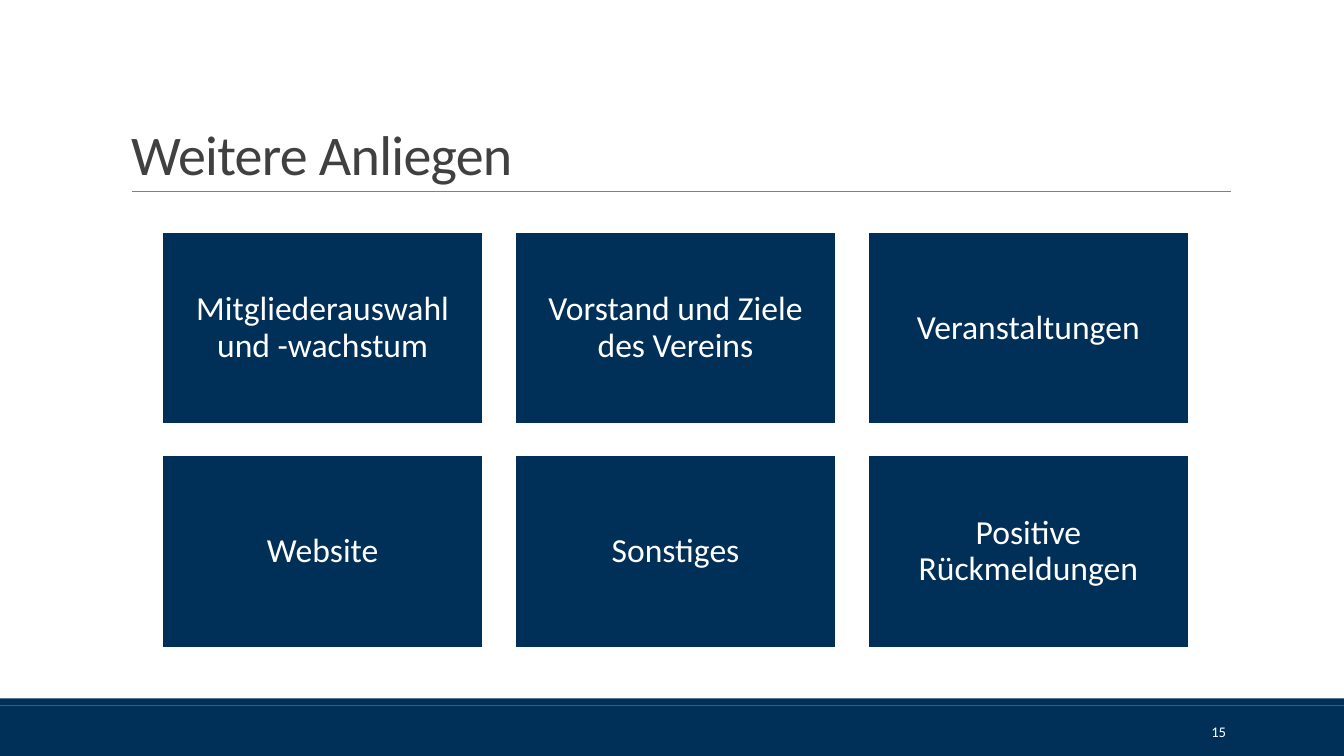
import dataclasses

import pptx
import pptx.dml.color
import pptx.enum.shapes
import pptx.enum.text
import pptx.oxml.ns
import pptx.util
import lxml.etree

Inches = pptx.util.Inches
Pt = pptx.util.Pt
Align = pptx.enum.text.PP_ALIGN
Anchor = pptx.enum.text.MSO_ANCHOR


@dataclasses.dataclass(frozen=True)
class Theme:
    font: str = "Calibri"
    navy: str = "003058"
    white: str = "FFFFFF"
    dark: str = "404040"
    gray: str = "808080"
    title: float = 40
    tile: float = 24
    page: float = 10.5


@dataclasses.dataclass(frozen=True)
class Grid:
    left: float = 1.61
    top: float = 2.3
    wide: float = 3.18
    high: float = 1.91
    step: float = 3.5
    drop: float = 2.22
    cols: int = 3

    def cell(self, index):
        row, col = divmod(index, self.cols)
        return (self.left + col * self.step, self.top + row * self.drop,
                self.wide, self.high)


THEME = Theme()
GRID = Grid()
WIDE, HIGH = 13.33, 7.5
TOPICS = (
    "Mitgliederauswahl und -wachstum",
    "Vorstand und Ziele des Vereins",
    "Veranstaltungen",
    "Website",
    "Sonstiges",
    "Positive Rückmeldungen",
)


def color(code):
    return pptx.dml.color.RGBColor.from_string(code)


def apply(target, values):
    for name, value in values.items():
        setattr(target, name, value)


def write(shape, text, size, ink, align, anchor, lead=1.0):
    frame = shape.text_frame
    frame.text = text
    apply(frame, {"word_wrap": True, "vertical_anchor": anchor,
                  "auto_size": pptx.enum.text.MSO_AUTO_SIZE.NONE})
    line = frame.paragraphs[0]
    apply(line, {"alignment": align, "line_spacing": lead})
    font = line.runs[0].font
    apply(font, {"name": THEME.font, "size": Pt(size)})
    font.color.rgb = color(ink)


def add_box(slide, place, edge=None):
    """Draw a navy rectangle, outlined only when an edge colour is given."""
    kind = pptx.enum.shapes.MSO_SHAPE.RECTANGLE
    box = slide.shapes.add_shape(kind, *map(Inches, place))
    box.shadow.inherit = False
    box.fill.solid()
    box.fill.fore_color.rgb = color(THEME.navy)
    if edge:
        box.line.color.rgb = color(edge)
        box.line.width = Pt(1.25)
    else:
        box.line.fill.background()
    return box


def add_rule(slide, left, right, top):
    kind = pptx.enum.shapes.MSO_CONNECTOR.STRAIGHT
    rule = slide.shapes.add_connector(kind, *map(Inches, (left, top, right, top)))
    rule.line.color.rgb = color(THEME.gray)
    rule.line.width = Pt(0.5)
    props = rule._element.spPr
    lxml.etree.SubElement(props, pptx.oxml.ns.qn("a:effectLst"))


def set_title(slide, text, place):
    title = slide.shapes.title
    names = ("left", "top", "width", "height")
    apply(title, dict(zip(names, map(Inches, place))))
    write(title, text, THEME.title, THEME.dark, Align.LEFT, Anchor.BOTTOM, 0.85)
    run = title.text_frame.paragraphs[0].runs[0]
    run.font._element.set("spc", "-50")


def add_page(slide, text, place):
    box = slide.shapes.add_textbox(*map(Inches, place))
    write(box, text, THEME.page, THEME.white, Align.RIGHT, Anchor.MIDDLE)


def add_tile(slide, text, place):
    tile = add_box(slide, place, THEME.white)
    write(tile, text, THEME.tile, THEME.white, Align.CENTER, Anchor.MIDDLE, 0.9)
    sides = ("left", "top", "right", "bottom")
    apply(tile.text_frame, {f"margin_{side}": Inches(0.1) for side in sides})


def main():
    deck = pptx.Presentation()
    apply(deck, {"slide_width": Inches(WIDE), "slide_height": Inches(HIGH)})
    slide = deck.slides.add_slide(deck.slide_layouts.get_by_name("Title Only"))
    for top, high in ((7, 0.5), (6.93, 0.07)):
        add_box(slide, (0, top, WIDE, high))
    add_rule(slide, 1.31, 12.21, 1.9)
    set_title(slide, "Weitere Anliegen", (1.2, 0.31, 11, 1.59))
    add_page(slide, "15", (10.83, 7.06, 1.43, 0.4))
    for index, topic in enumerate(TOPICS):
        add_tile(slide, topic, GRID.cell(index))
    deck.save("out.pptx")


if __name__ == "__main__":
    main()
